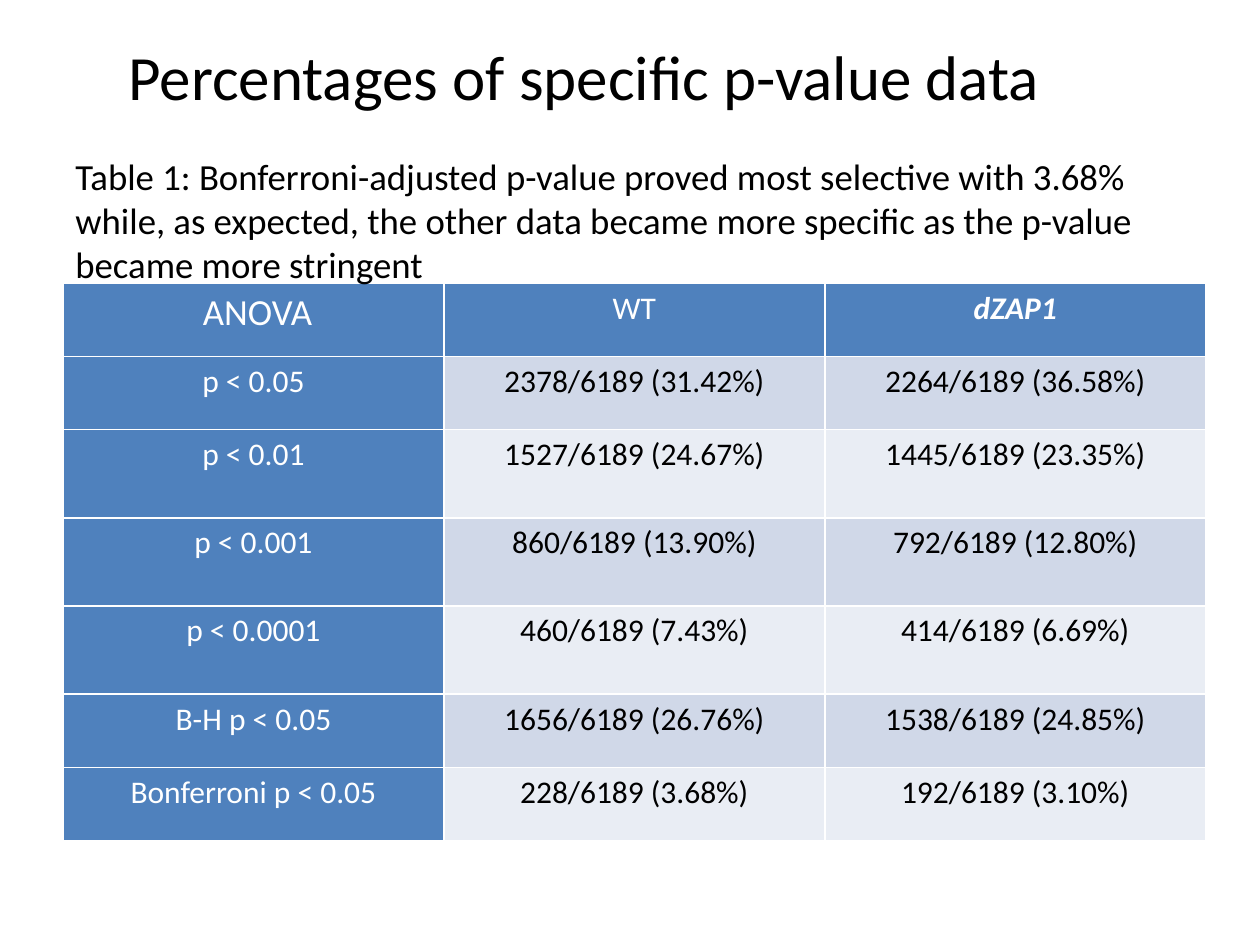
from dataclasses import dataclass

from lxml import etree
from pptx import Presentation
from pptx.dml.color import RGBColor
from pptx.enum.text import MSO_ANCHOR, PP_ALIGN
from pptx.oxml.ns import qn
from pptx.util import Inches, Pt

LEFT, CENTER = PP_ALIGN.LEFT, PP_ALIGN.CENTER
TOP = MSO_ANCHOR.TOP
WIDTH, HEIGHT = Inches(10), Inches(7.5)
FONT = "Calibri"
BLACK, WHITE, BLUE = "000000", "FFFFFF", "4F81BD"
BANDS = ("D0D8E8", "E9EDF4")
BORDER_SIDES = ("a:lnL", "a:lnR", "a:lnT", "a:lnB")


@dataclass
class Area:
    left: float
    top: float
    width: float
    height: float

    def lengths(self) -> tuple[int, int, int, int]:
        return (round(self.left * WIDTH), round(self.top * HEIGHT),
                round(self.width * WIDTH), round(self.height * HEIGHT))


@dataclass
class Row:
    label: str
    wild_type: str
    mutant: str
    height: float = 0.58


TITLE_AREA = Area(0.092, 0.033, 0.783, 0.095)
CAPTION_AREA = Area(0.05, 0.156, 0.925, 0.155)
TABLE_AREA = Area(0.05, 0.3, 0.907, 0.592)
CAPTION = (
    "Table 1: Bonferroni-adjusted p-value proved most selective with 3.68% "
    "while, as expected, the other data became more specific as the p-value "
    "became more stringent"
)
ROWS = [
    Row(" ANOVA", "WT", "dZAP1"),
    Row("p < 0.05", "2378/6189 (31.42%)", "2264/6189 (36.58%)"),
    Row("p < 0.01", "1527/6189 (24.67%)", "1445/6189 (23.35%)", 0.7),
    Row("p < 0.001", "860/6189 (13.90%)", "792/6189 (12.80%)", 0.7),
    Row("p < 0.0001", "460/6189 (7.43%)", "414/6189 (6.69%)", 0.7),
    Row("B-H p < 0.05", "1656/6189 (26.76%)", "1538/6189 (24.85%)"),
    Row("Bonferroni p < 0.05", "228/6189 (3.68%)", "192/6189 (3.10%)"),
]


def color(value: str) -> RGBColor:
    return RGBColor.from_string(value)


def write_text(text_frame, text: str, *, size: float, ink: str = BLACK,
               align=LEFT, spacing: float = 1.0, emphasis: bool = False) -> None:
    text_frame.word_wrap = True
    paragraph = text_frame.paragraphs[0]
    paragraph.alignment = align
    paragraph.line_spacing = spacing
    run = paragraph.add_run()
    run.text = text
    run.font.name = FONT
    run.font.size = Pt(size)
    run.font.bold = run.font.italic = emphasis
    run.font.color.rgb = color(ink)


def add_borders(cell, line_color: str, width: float) -> None:
    properties = cell._tc.get_or_add_tcPr()
    for position, side in enumerate(BORDER_SIDES):
        line = etree.Element(qn(side), w=str(Pt(width)))
        fill = etree.SubElement(line, qn("a:solidFill"))
        etree.SubElement(fill, qn("a:srgbClr"), val=line_color)
        properties.insert(position, line)


def format_cell(cell, text: str, row: int, column: int) -> None:
    heading = row == 0 or column == 0
    cell.fill.solid()
    cell.fill.fore_color.rgb = color(BLUE if heading else BANDS[(row - 1) % 2])
    cell.margin_left = cell.margin_right = Inches(0.07)
    cell.margin_top = cell.margin_bottom = 0
    cell.vertical_anchor = TOP
    add_borders(cell, WHITE, 1)
    write_text(cell.text_frame, text, size=21 if row == column == 0 else 18,
               ink=WHITE if heading else BLACK, align=CENTER, spacing=1.15,
               emphasis=row == 0 and column == 2)


def add_results_table(slide, area: Area, rows: list[Row]) -> None:
    table = slide.shapes.add_table(len(rows), 3, *area.lengths()).table
    for row_index, row in enumerate(rows):
        table.rows[row_index].height = Inches(row.height)
        for column_index, text in enumerate((row.label, row.wild_type, row.mutant)):
            format_cell(table.cell(row_index, column_index), text,
                        row_index, column_index)


def format_title(slide, area: Area, text: str) -> None:
    title = slide.shapes.title
    title.left, title.top, title.width, title.height = area.lengths()
    title.text_frame.vertical_anchor = TOP
    write_text(title.text_frame, text, size=36)


def add_caption(slide, area: Area, text: str) -> None:
    caption = slide.shapes.add_textbox(*area.lengths())
    write_text(caption.text_frame, text, size=21)


def main() -> None:
    presentation = Presentation()
    presentation.slide_width, presentation.slide_height = WIDTH, HEIGHT
    slide = presentation.slides.add_slide(
        presentation.slide_layouts.get_by_name("Title Only"))
    add_results_table(slide, TABLE_AREA, ROWS)
    add_caption(slide, CAPTION_AREA, CAPTION)
    format_title(slide, TITLE_AREA, "Percentages of specific p-value data")
    presentation.save("out.pptx")


if __name__ == "__main__":
    main()
